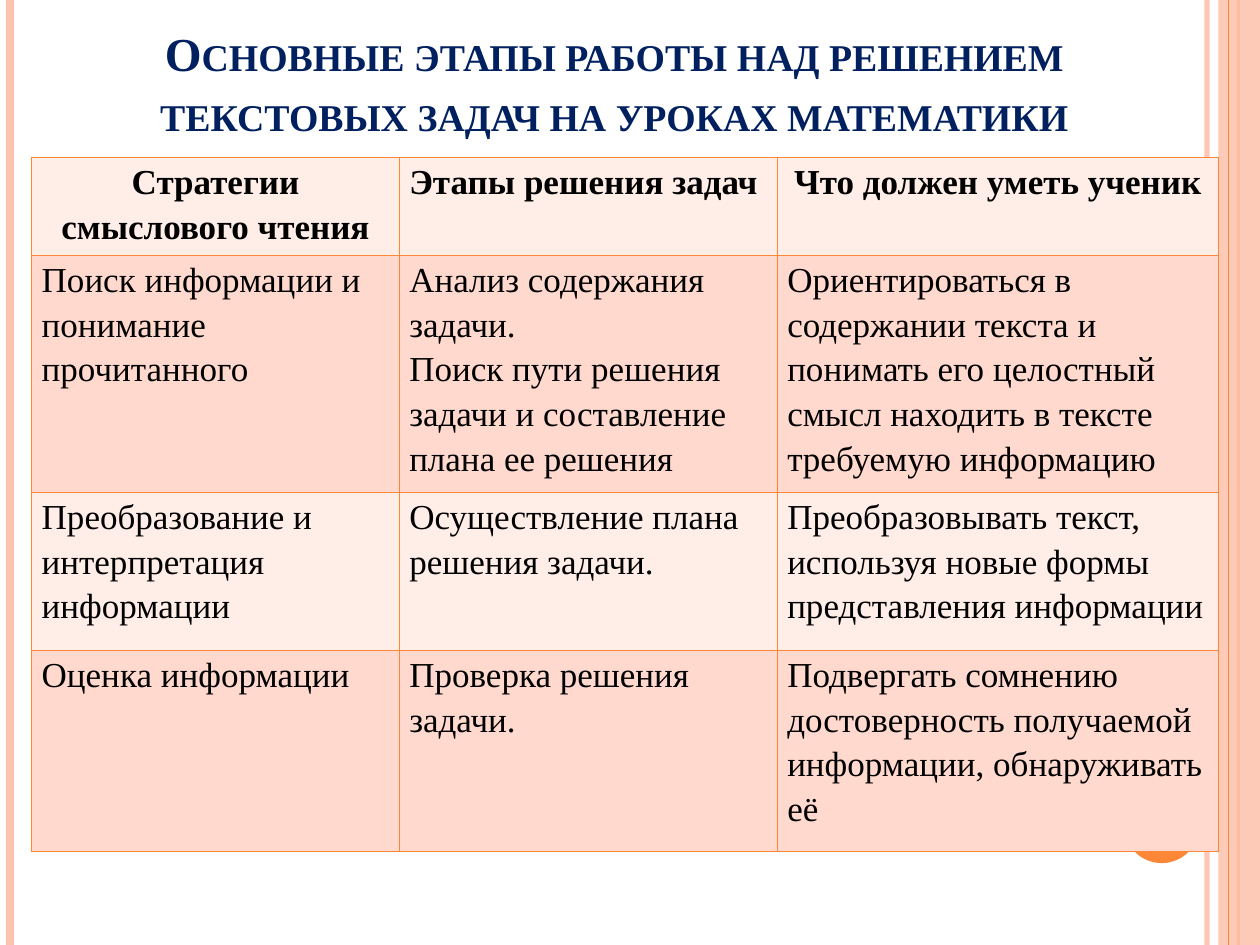
"""Build the slide on the stages of solving word problems."""
from dataclasses import dataclass

from lxml import etree
from pptx import Presentation
from pptx.dml.color import RGBColor
from pptx.enum.shapes import MSO_CONNECTOR, MSO_SHAPE
from pptx.enum.text import MSO_ANCHOR, MSO_AUTO_SIZE, PP_ALIGN
from pptx.oxml.ns import qn
from pptx.util import Cm, Pt

STRAIGHT = MSO_CONNECTOR.STRAIGHT
RECTANGLE, OVAL = MSO_SHAPE.RECTANGLE, MSO_SHAPE.OVAL
BOTTOM = MSO_ANCHOR.BOTTOM
NO_FIT = MSO_AUTO_SIZE.NONE
LEFT, CENTER = PP_ALIGN.LEFT, PP_ALIGN.CENTER

FONT = "Times New Roman"
ORANGE, PEACH = "FE8637", "FEC3AE"
BANDS = ("FFEDE8", "FFD9CE")
PAGE_WIDTH, PAGE_HEIGHT = 25.4, 19.05


@dataclass
class Stripe:
    x: float
    color: str
    width: float
    opacity: int = 100


@dataclass
class Figure:
    kind: int
    left: float
    top: float
    width: float
    height: float
    color: str
    opacity: int = 100


BACK_STRIPES = (
    Stripe(24.33, PEACH, 3, 93),
    Stripe(0.2, PEACH, 4.5),
    Stripe(24.97, ORANGE, 1.5),
)
SIDE_BAND = Figure(RECTANGLE, 24.56, 0, 0.84, PAGE_HEIGHT, PEACH, 87)
INNER_STRIPE = Stripe(24.77, ORANGE, 0.75)
CIRCLE = Figure(OVAL, 22.66, 15.88, 1.52, 1.52, ORANGE)

TITLE = "Основные этапы работы над решением текстовых задач на уроках математики"
COLUMN_WIDTHS = (7.41, 7.62, 8.89)
ROW_HEIGHTS = (1.98, 4.78, 3.18, 4.06)
HEADER_ALIGNMENTS = (CENTER, LEFT, CENTER)
ROWS = (
    ("Стратегии смыслового чтения", "Этапы решения задач", "Что должен уметь ученик"),
    (
        "Поиск информации и понимание прочитанного",
        "Анализ содержания задачи.\n"
        "Поиск пути решения задачи и составление плана ее решения",
        "Ориентироваться в содержании текста и понимать его целостный смысл "
        "находить в тексте требуемую информацию",
    ),
    (
        "Преобразование и интерпретация информации",
        "Осуществление плана решения задачи.",
        "Преобразовывать текст, используя новые формы представления информации",
    ),
    (
        "Оценка информации",
        "Проверка решения задачи.",
        "Подвергать сомнению достоверность получаемой информации, обнаруживать её",
    ),
)


def rgb(color: str) -> RGBColor:
    """Turn a hex string into a colour."""
    return RGBColor.from_string(color)


def set_opacity(element, opacity: int) -> None:
    """Make the first solid colour inside an element partly transparent."""
    if opacity < 100:
        color = next(element.iter(qn("a:srgbClr")))
        etree.SubElement(color, qn("a:alpha")).set("val", str(opacity * 1000))


def draw_stripe(page, stripe: Stripe) -> None:
    """Draw a vertical line over the full page height."""
    line = page.shapes.add_connector(
        STRAIGHT, Cm(stripe.x), 0, Cm(stripe.x), Cm(PAGE_HEIGHT)
    )
    line.line.color.rgb = rgb(stripe.color)
    line.line.width = Pt(stripe.width)
    properties = line._element.spPr
    set_opacity(properties, stripe.opacity)
    etree.SubElement(properties, qn("a:effectLst"))


def draw_figure(page, figure: Figure) -> None:
    """Draw a filled shape without outline."""
    bounds = (figure.left, figure.top, figure.width, figure.height)
    shape = page.shapes.add_shape(figure.kind, *map(Cm, bounds))
    shape.shadow.inherit = False
    shape.fill.solid()
    shape.fill.fore_color.rgb = rgb(figure.color)
    shape.line.fill.background()
    set_opacity(shape._element.spPr, figure.opacity)


def write_text(frame, text: str, *, size: float, color: str = "000000",
               bold: bool = False, align: int = LEFT, spacing: float = 1.0,
               small_caps: bool = False) -> None:
    """Fill a text frame with one formatted paragraph per line."""
    frame.text = text
    frame.word_wrap = True
    for para in frame.paragraphs:
        para.alignment = align
        para.line_spacing = spacing
        for span in para.runs:
            span.font.name = FONT
            span.font.size = Pt(size)
            span.font.bold = bold
            span.font.color.rgb = rgb(color)
            if small_caps:
                span.font._element.set("cap", "small")


def draw_title(page) -> None:
    """Place and format the title placeholder."""
    box = page.shapes.title
    box.left, box.top, box.width, box.height = map(Cm, (1.27, 0.64, 22.23, 2.33))
    write_text(box.text_frame, TITLE, size=27, color="002060", bold=True,
               align=CENTER, spacing=1.05, small_caps=True)
    box.text_frame.vertical_anchor = BOTTOM
    box.text_frame.auto_size = NO_FIT


def format_cell(cell, fill: str) -> None:
    """Set the margins, borders and fill of a table cell."""
    cell.margin_left = cell.margin_right = Cm(0.2)
    cell.margin_top = cell.margin_bottom = 0
    properties = cell._tc.get_or_add_tcPr()
    for side in ("lnL", "lnR", "lnT", "lnB"):
        border = etree.SubElement(properties, qn(f"a:{side}"), w=str(Pt(1)))
        solid = etree.SubElement(border, qn("a:solidFill"))
        etree.SubElement(solid, qn("a:srgbClr"), val=ORANGE)
    cell.fill.solid()
    cell.fill.fore_color.rgb = rgb(fill)


def draw_table(page) -> None:
    """Draw the table of strategies, stages and skills."""
    table = page.shapes.add_table(
        len(ROWS), len(COLUMN_WIDTHS), Cm(0.64), Cm(3.17),
        Cm(sum(COLUMN_WIDTHS)), Cm(sum(ROW_HEIGHTS)),
    ).table
    table.first_row = table.horz_banding = False
    for column, width in zip(table.columns, COLUMN_WIDTHS):
        column.width = Cm(width)
    for index, (texts, height) in enumerate(zip(ROWS, ROW_HEIGHTS)):
        table.rows[index].height = Cm(height)
        header = index == 0
        for position, text in enumerate(texts):
            cell = table.cell(index, position)
            format_cell(cell, BANDS[index % 2])
            write_text(cell.text_frame, text, size=20, bold=header, spacing=1.15,
                       align=HEADER_ALIGNMENTS[position] if header else LEFT)


def main() -> None:
    """Build and save the deck."""
    deck = Presentation()
    deck.slide_width, deck.slide_height = Cm(PAGE_WIDTH), Cm(PAGE_HEIGHT)
    page = deck.slides.add_slide(deck.slide_layouts[5])
    for stripe in BACK_STRIPES:
        draw_stripe(page, stripe)
    draw_figure(page, SIDE_BAND)
    draw_stripe(page, INNER_STRIPE)
    draw_figure(page, CIRCLE)
    draw_title(page)
    draw_table(page)
    deck.save("out.pptx")


if __name__ == "__main__":
    main()
